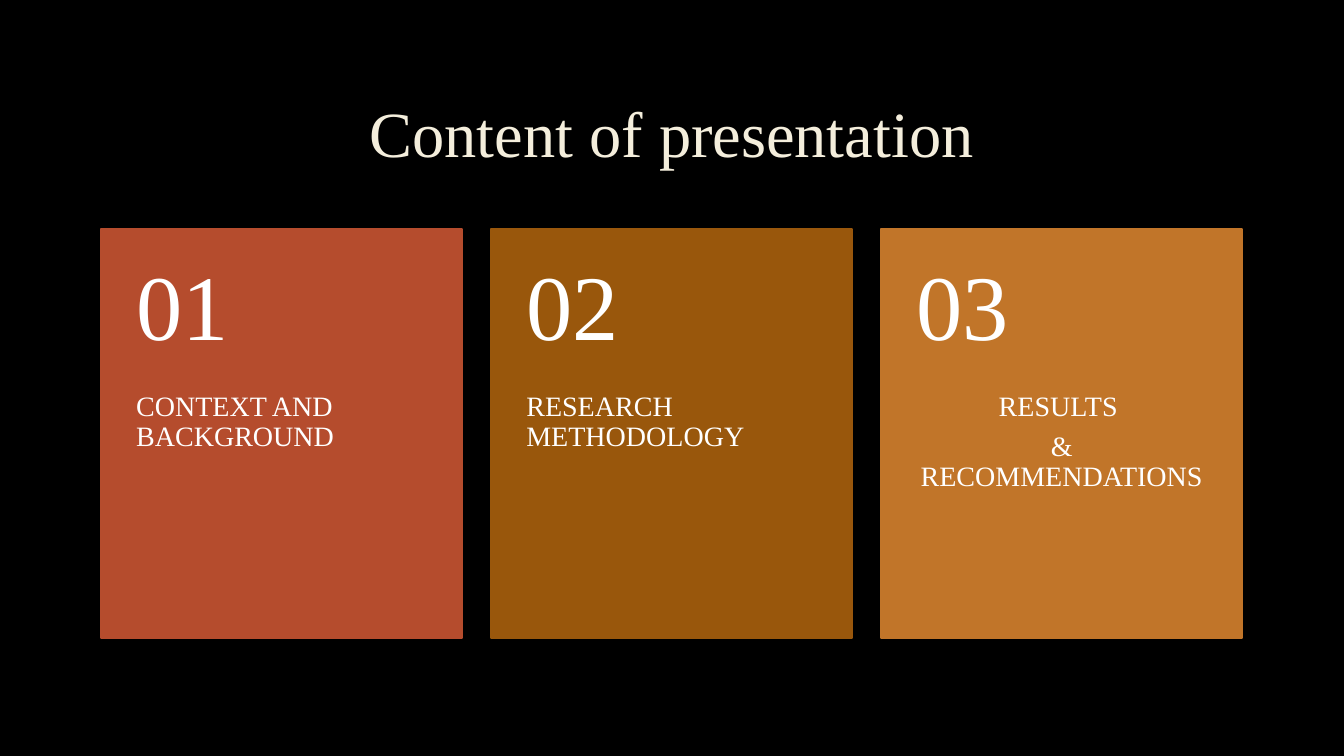
import pptx
import pptx.util
import pptx.dml.color
import pptx.enum.shapes
import pptx.enum.text

Inches = pptx.util.Inches
Pt = pptx.util.Pt
Align = pptx.enum.text.PP_ALIGN
Anchor = pptx.enum.text.MSO_ANCHOR

TITLE = "Content of presentation"
CARDS = [
    ("01", ["CONTEXT AND BACKGROUND"], "rust", Align.LEFT),
    ("02", ["RESEARCH METHODOLOGY"], "brown", Align.LEFT),
    ("03", ["RESULTS ", "& RECOMMENDATIONS"], "amber", Align.CENTER),
]
COLORS = {
    "back": "000000",
    "cream": "F4EEDC",
    "white": "FFFFFF",
    "rust": "B54C2D",
    "brown": "99570C",
    "amber": "C17529",
}
FONT = "Times New Roman"
LEFT, TOP = 1, 2.27
WIDTH, HEIGHT = 3.58, 4.06
STEP = 3.87
HEAD = 1.62
PAD = (0.35, 0.18, 0.35, 0.18)
LOW_PAD = (0.35, 0, 0.35, 0.36)


def color(name):
    return pptx.dml.color.RGBColor.from_string(COLORS[name])


def add_text(slide, box, lines, size, ink, align, anchor, pad, after=0):
    """Add a text box; box is left, top, width, height and pad its insets, in inches."""
    frame = slide.shapes.add_textbox(*map(Inches, box)).text_frame
    frame.word_wrap = True
    frame.vertical_anchor = anchor
    (frame.margin_left, frame.margin_top,
     frame.margin_right, frame.margin_bottom) = map(Inches, pad)
    frame.text = "\n".join(lines)
    for para in frame.paragraphs:
        para.alignment = align
        para.line_spacing = 0.9
        para.space_after = Pt(after)
        para.font.name = FONT
        para.font.size = Pt(size)
        para.font.color.rgb = color(ink)


def add_card(slide, left, number, lines, fill, align):
    card = slide.shapes.add_shape(
        pptx.enum.shapes.MSO_SHAPE.RECTANGLE,
        *map(Inches, (left, TOP, WIDTH, HEIGHT)))
    card.shadow.inherit = False
    card.fill.solid()
    card.fill.fore_color.rgb = color(fill)
    card.line.color.rgb = color(fill)
    card.line.width = Pt(1.25)
    add_text(slide, (left, TOP + HEAD, WIDTH, HEIGHT - HEAD), lines,
             20, "white", align, Anchor.TOP, LOW_PAD, after=7)
    add_text(slide, (left, TOP, WIDTH, HEAD), [number],
             66, "white", Align.LEFT, Anchor.MIDDLE, PAD)


def main():
    deck = pptx.Presentation()
    deck.slide_width, deck.slide_height = Inches(13.33), Inches(7.5)
    slide = deck.slides.add_slide(deck.slide_layouts[6])
    slide.background.fill.solid()
    slide.background.fill.fore_color.rgb = color("back")

    add_text(slide, (LEFT, 0.67, 11.32, 1.38), [TITLE], 46, "cream",
             Align.CENTER, Anchor.MIDDLE, (0.1, 0.05, 0.1, 0.05))
    for index, card in enumerate(CARDS):
        add_card(slide, LEFT + index * STEP, *card)
    deck.save("out.pptx")


if __name__ == "__main__":
    main()
